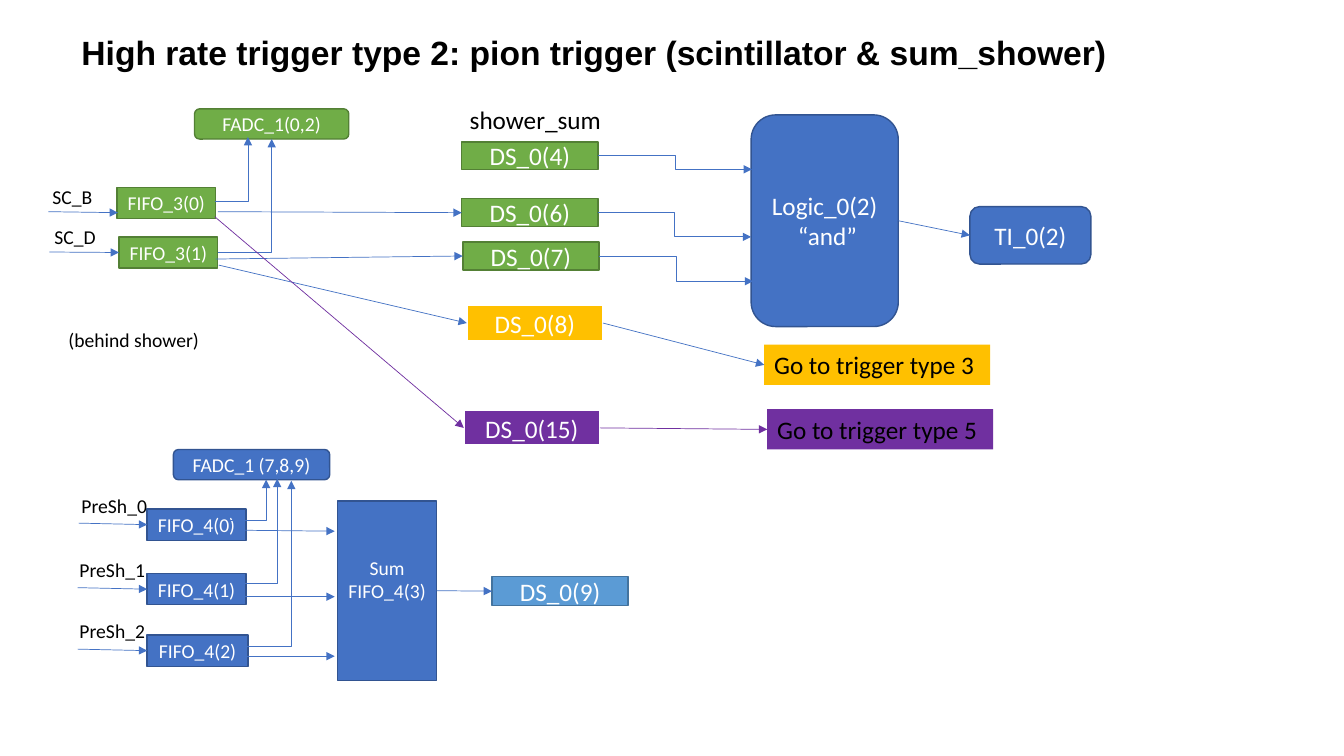
from lxml.etree import SubElement
from pptx import Presentation
from pptx.dml.color import RGBColor
from pptx.enum.shapes import MSO_CONNECTOR as LINK, MSO_SHAPE as SHAPE
from pptx.enum.text import MSO_ANCHOR as ANCHOR, MSO_AUTO_SIZE as FIT, PP_ALIGN as ALIGN
from pptx.oxml.ns import qn
from pptx.util import Emu, Pt

PX = 9144  # EMU per px, 100 px to the inch
BLUE = RGBColor(0x44, 0x72, 0xC4)
BLUE_EDGE = RGBColor(0x32, 0x54, 0x91)
SKY = RGBColor(0x5B, 0x9B, 0xD5)
SKY_EDGE = RGBColor(0x43, 0x73, 0x9E)
GREEN = RGBColor(0x70, 0xAD, 0x47)
GREEN_EDGE = RGBColor(0x53, 0x80, 0x35)
GOLD = RGBColor(0xFF, 0xC0, 0x00)
PURPLE = RGBColor(0x70, 0x30, 0xA0)
WHITE = RGBColor(0xFF, 0xFF, 0xFF)
BLACK = RGBColor(0x00, 0x00, 0x00)
EDGES = {BLUE: BLUE_EDGE, SKY: SKY_EDGE, GREEN: GREEN_EDGE, GOLD: WHITE, PURPLE: WHITE}
RECT, ROUND = SHAPE.RECTANGLE, SHAPE.ROUNDED_RECTANGLE
TOP, LEFT, BOTTOM, RIGHT = range(4)

presentation = Presentation()
presentation.slide_width = Emu(1333 * PX)
presentation.slide_height = Emu(750 * PX)
slide = presentation.slides.add_slide(presentation.slide_layouts[6])


def write_lines(frame, text, size, color, align, font="Calibri", bold=False):
    for index, line in enumerate(text.split("\n")):
        paragraph = frame.paragraphs[0] if index == 0 else frame.add_paragraph()
        paragraph.alignment = align
        run = paragraph.add_run()
        run.text = line
        run.font.name = font
        run.font.size = Pt(size)
        run.font.bold = bold
        run.font.color.rgb = color


def add_arrow(start, end, kind=LINK.STRAIGHT, color=BLUE, one_bend=False):
    """Draw an arrow; each end is an (x, y) point or a (block name, side) pair."""
    joined = [isinstance(spot[0], str) for spot in (start, end)]
    points = [0 if is_joined else value * PX
              for spot, is_joined in zip((start, end), joined) for value in spot]
    connector = slide.shapes.add_connector(kind, *points)
    if joined[0]:
        connector.begin_connect(blocks[start[0]], start[1])
    if joined[1]:
        connector.end_connect(blocks[end[0]], end[1])
    connector.line.color.rgb = color
    connector.line.width = Pt(0.5)
    properties = connector._element.spPr
    if one_bend:
        properties.find(qn("a:prstGeom")).set("prst", "bentConnector2")
    SubElement(properties.find(qn("a:ln")), qn("a:tailEnd"), type="triangle")
    SubElement(properties, qn("a:effectLst"))


# Title
title = slide.shapes.add_textbox(71 * PX, 27 * PX, 1216 * PX, 46 * PX)
title.text_frame.word_wrap = True
write_lines(title.text_frame,
            "High rate trigger type 2: pion trigger (scintillator & sum_shower)",
            24, BLACK, ALIGN.LEFT, font="Arial", bold=True)

# Trigger modules
blocks = {}
for text, preset, fill, size, left, top, width, height in (
    ("Logic_0(2)\n “and”", ROUND, BLUE, 18, 745, 114, 146, 210),
    ("TI_0(2)", ROUND, BLUE, 18, 962, 205, 120, 57),
    ("Sum\nFIFO_4(3)", RECT, BLUE, 14, 335, 497, 98, 178),
    ("FIFO_4(0)", RECT, BLUE, 14, 146, 505, 98, 31),
    ("FIFO_4(1)", RECT, BLUE, 14, 146, 569, 98, 31),
    ("FIFO_4(2)", RECT, BLUE, 14, 146, 630, 100, 31),
    ("FADC_1 (7,8,9)", ROUND, BLUE, 14, 172, 446, 155, 30),
    ("DS_0(9)", RECT, SKY, 18, 488, 572, 135, 29),
    ("FADC_1(0,2)", ROUND, GREEN, 14, 193, 108, 153, 30),
    ("FIFO_3(0)", RECT, GREEN, 14, 116, 186, 98, 31),
    ("FIFO_3(1)", RECT, GREEN, 14, 118, 235, 98, 31),
    ("DS_0(4)", RECT, GREEN, 18, 458, 141, 135, 27),
    ("DS_0(6)", RECT, GREEN, 18, 458, 197, 135, 28),
    ("DS_0(7)", RECT, GREEN, 18, 459, 240, 135, 28),
    ("DS_0(8)", RECT, GOLD, 18, 463, 303, 135, 35),
    ("DS_0(15)", RECT, PURPLE, 18, 460, 407, 135, 35),
):
    block = slide.shapes.add_shape(preset, left * PX, top * PX, width * PX, height * PX)
    block.shadow.inherit = False
    block.fill.solid()
    block.fill.fore_color.rgb = fill
    block.line.color.rgb = EDGES[fill]
    block.line.width = Pt(1.5 if EDGES[fill] == WHITE else 1)
    block.text_frame.vertical_anchor = ANCHOR.MIDDLE
    write_lines(block.text_frame, text, size, WHITE, ALIGN.CENTER)
    blocks[text.split("\n")[0]] = block
blocks["Sum"].text_frame.margin_bottom = Emu(28 * PX)

# Signal labels and onward links
for text, size, left, top, width, height, wrap, fill in (
    ("PreSh_0", 14, 71, 485, 86, 34, False, None),
    ("PreSh_1", 14, 69, 549, 86, 34, False, None),
    ("PreSh_2", 14, 69, 609, 86, 34, False, None),
    ("shower_sum", 18, 456, 99, 152, 40, False, None),
    ("SC_B", 14, 42, 179, 62, 34, False, None),
    ("SC_D", 14, 44, 218, 78, 34, True, None),
    ("(behind shower)", 14, 58, 320, 157, 34, True, None),
    ("Go to trigger type 3", 18, 758, 342, 224, 40, True, GOLD),
    ("Go to trigger type 5", 18, 761, 406, 224, 40, True, PURPLE),
):
    label = slide.shapes.add_textbox(left * PX, top * PX, width * PX, height * PX)
    label.text_frame.word_wrap = wrap
    label.text_frame.auto_size = FIT.SHAPE_TO_FIT_TEXT
    write_lines(label.text_frame, text, size, BLACK, ALIGN.LEFT)
    if fill is not None:
        label.fill.solid()
        label.fill.fore_color.rgb = fill
    blocks[text] = label

# Preshower: input, branch to the FADC, and output to the sum
for name, source, branch_start, branch_end, sum_start, sum_end in (
    ("FIFO_4(0)", (78, 519), (228, 516), (264, 476), (235, 526), (332, 527)),
    ("FIFO_4(1)", (77, 583), (239, 579), (275, 475), (235, 592), (332, 592)),
    ("FIFO_4(2)", (77, 644), (236, 641), (289, 477), (239, 651), (332, 651)),
):
    add_arrow(source, (name, LEFT))
    add_arrow(branch_start, branch_end, LINK.ELBOW, one_bend=True)
    add_arrow(sum_start, sum_end)

# Scintillator branches to the FADC
add_arrow((213, 200), (246, 136), LINK.ELBOW, one_bend=True)
add_arrow(("FIFO_3(1)", RIGHT), ("FADC_1(0,2)", BOTTOM), LINK.ELBOW, one_bend=True)

# Discriminators into the logic unit
for name, end in (("DS_0(4)", (746, 168)), ("DS_0(6)", (745, 235)), ("DS_0(7)", (747, 279))):
    add_arrow((name, RIGHT), end, LINK.ELBOW)

# Straight signal paths
for start, end, color in (
    ((48, 210), (117, 211), BLUE),
    ((49, 250), ("FIFO_3(1)", LEFT), BLUE),
    ((216, 210), ("DS_0(6)", LEFT), BLUE),
    ((214, 257), ("DS_0(7)", LEFT), BLUE),
    ((217, 263), ("DS_0(8)", LEFT), BLUE),
    ((213, 215), ("DS_0(15)", LEFT), PURPLE),
    (("Sum", RIGHT), ("DS_0(9)", LEFT), BLUE),
    (("Logic_0(2)", RIGHT), ("TI_0(2)", LEFT), BLUE),
    (("DS_0(8)", RIGHT), ("Go to trigger type 3", LEFT), BLUE),
    (("DS_0(15)", RIGHT), ("Go to trigger type 5", LEFT), PURPLE),
):
    add_arrow(start, end, color=color)

presentation.save("out.pptx")
